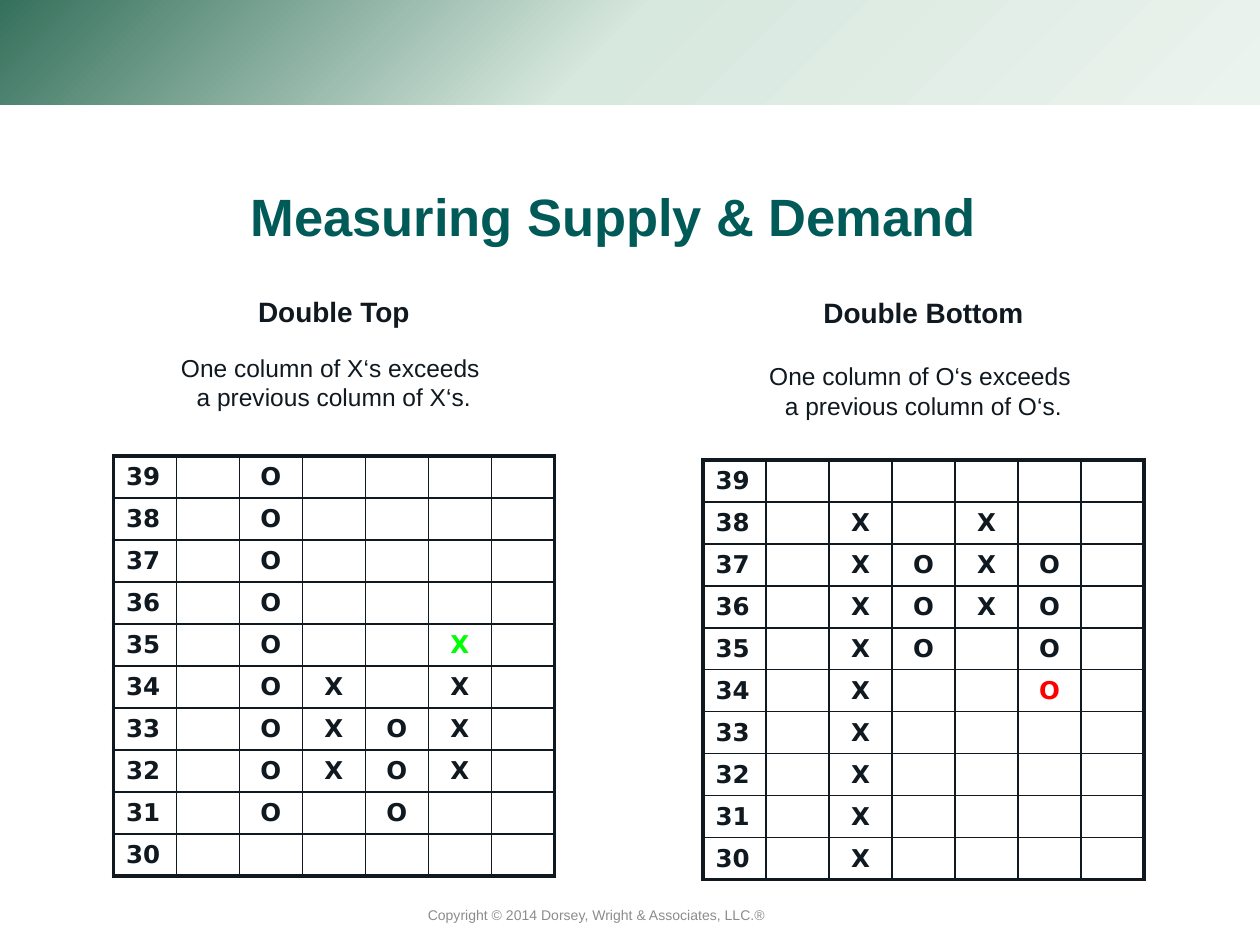
from lxml.etree import SubElement
from pptx import Presentation
from pptx.dml.color import RGBColor
from pptx.enum.shapes import MSO_SHAPE
from pptx.enum.text import MSO_ANCHOR, PP_ALIGN
from pptx.oxml.ns import qn
from pptx.util import Inches, Pt

INK = RGBColor(0x10, 0x18, 0x20)
TEAL = RGBColor(0x00, 0x5A, 0x58)
GRAY = RGBColor(0x8C, 0x8C, 0x8D)
GREEN = RGBColor(0x00, 0xFF, 0x00)
RED = RGBColor(0xFF, 0x00, 0x00)
BAND_STOPS = [
    (0, RGBColor(0x35, 0x70, 0x5C)),
    (48, RGBColor(0xD7, 0xE8, 0xDE)),
    (100, RGBColor(0xEB, 0xF3, 0xEE)),
]
COLUMN, ROW = Inches(0.5), Inches(1 / 3)


def write(paragraph, text, size=14, color=INK, bold=False, font="Arial",
          align=PP_ALIGN.CENTER, before=0):
    paragraph.alignment = align
    if before:
        paragraph.space_before = Pt(before)
    run = paragraph.add_run()
    run.text = text
    run.font.name = font
    run.font.size = Pt(size)
    run.font.bold = bold
    run.font.color.rgb = color


def draw_border(cell, side, width):
    line = SubElement(cell._tc.get_or_add_tcPr(), qn(f"a:ln{side}"), w=str(Pt(width)))
    fill = SubElement(line, qn("a:solidFill"))
    SubElement(fill, qn("a:srgbClr"), val=str(INK))


prs = Presentation()
prs.slide_width, prs.slide_height = Inches(10), Inches(7.5)
slide = prs.slides.add_slide(prs.slide_layouts[5])

# Header band, shaded diagonally from the top left corner
band = slide.shapes.add_shape(MSO_SHAPE.RECTANGLE, 0, 0, prs.slide_width, prs.slide_height // 9)
band.shadow.inherit = False
band.line.fill.background()
band.fill.gradient()
band.fill.gradient_angle = 315
stops = band._element.spPr.find(qn("a:gradFill")).find(qn("a:gsLst"))
for old_stop in list(stops):
    stops.remove(old_stop)
for position, shade in BAND_STOPS:
    stop = SubElement(stops, qn("a:gs"), pos=str(position * 1000))
    SubElement(stop, qn("a:srgbClr"), val=str(shade))

# Title
title = slide.shapes.title
title.left, title.top, title.width, title.height = (
    Inches(1.33), Inches(1.17), Inches(7.08), Inches(1.08))
title.text_frame.vertical_anchor = MSO_ANCHOR.MIDDLE
write(title.text_frame.paragraphs[0], "Measuring Supply & Demand", size=30, color=TEAL, bold=True)

# Each pattern: heading, mark, caption place and gap, chart place,
# rows from price 39 down to 30, highlighted price and column, highlight colour
patterns = [
    ("Double Top", "X", (1.33, 2.29, 2.64, 1.03), 14, (0.9, 3.62),
     [" O    ", " O    ", " O    ", " O    ", " O  X ",
      " OX X ", " OXOX ", " OXOX ", " O O  ", "      "], (35, 5), GREEN),
    ("Double Bottom", "O", (6, 2.3, 2.66, 1.08), 18, (5.58, 3.65),
     ["      ", " X X  ", " XOXO ", " XOXO ", " XO O ",
      " X  O ", " X    ", " X    ", " X    ", " X    "], (34, 5), RED),
]

for heading, mark, caption_box, gap, corner, price_rows, signal, signal_color in patterns:
    # Caption
    caption = slide.shapes.add_textbox(*map(Inches, caption_box)).text_frame
    caption.word_wrap = False
    write(caption.paragraphs[0], heading, size=16, bold=True)
    write(caption.add_paragraph(), f"One column of {mark}‘s exceeds ", before=gap)
    write(caption.add_paragraph(), f"a previous column of {mark}‘s.")

    # Point and figure chart
    row_count, column_count = len(price_rows), len(price_rows[0]) + 1
    chart = slide.shapes.add_table(
        row_count, column_count, *map(Inches, corner),
        COLUMN * column_count, ROW * row_count).table
    chart.first_row = chart.horz_banding = False
    for r, marks in enumerate(price_rows):
        chart.rows[r].height = ROW
        price = 39 - r
        for c, text in enumerate([str(price), *marks]):
            chart.columns[c].width = COLUMN
            cell = chart.cell(r, c)
            cell.vertical_anchor = MSO_ANCHOR.MIDDLE
            cell.margin_top = cell.margin_bottom = 0
            outer = {"L": c == 0, "R": c == column_count - 1,
                     "T": r == 0, "B": r == row_count - 1}
            for side, is_outer in outer.items():
                draw_border(cell, side, 2.25 if is_outer else 1)
            cell.fill.background()
            if text.strip():
                write(cell.text_frame.paragraphs[0], text, bold=True, font="DejaVu Sans",
                      color=signal_color if (price, c) == signal else INK,
                      align=PP_ALIGN.CENTER if c else PP_ALIGN.LEFT)

# Copyright line
footer = slide.shapes.add_textbox(Inches(1.36), Inches(7.06), Inches(6.75), Inches(0.4)).text_frame
footer.word_wrap = True
footer.vertical_anchor = MSO_ANCHOR.MIDDLE
write(footer.paragraphs[0], "Copyright © 2014 Dorsey, Wright & Associates, LLC.®", size=8, color=GRAY)

prs.save("out.pptx")
